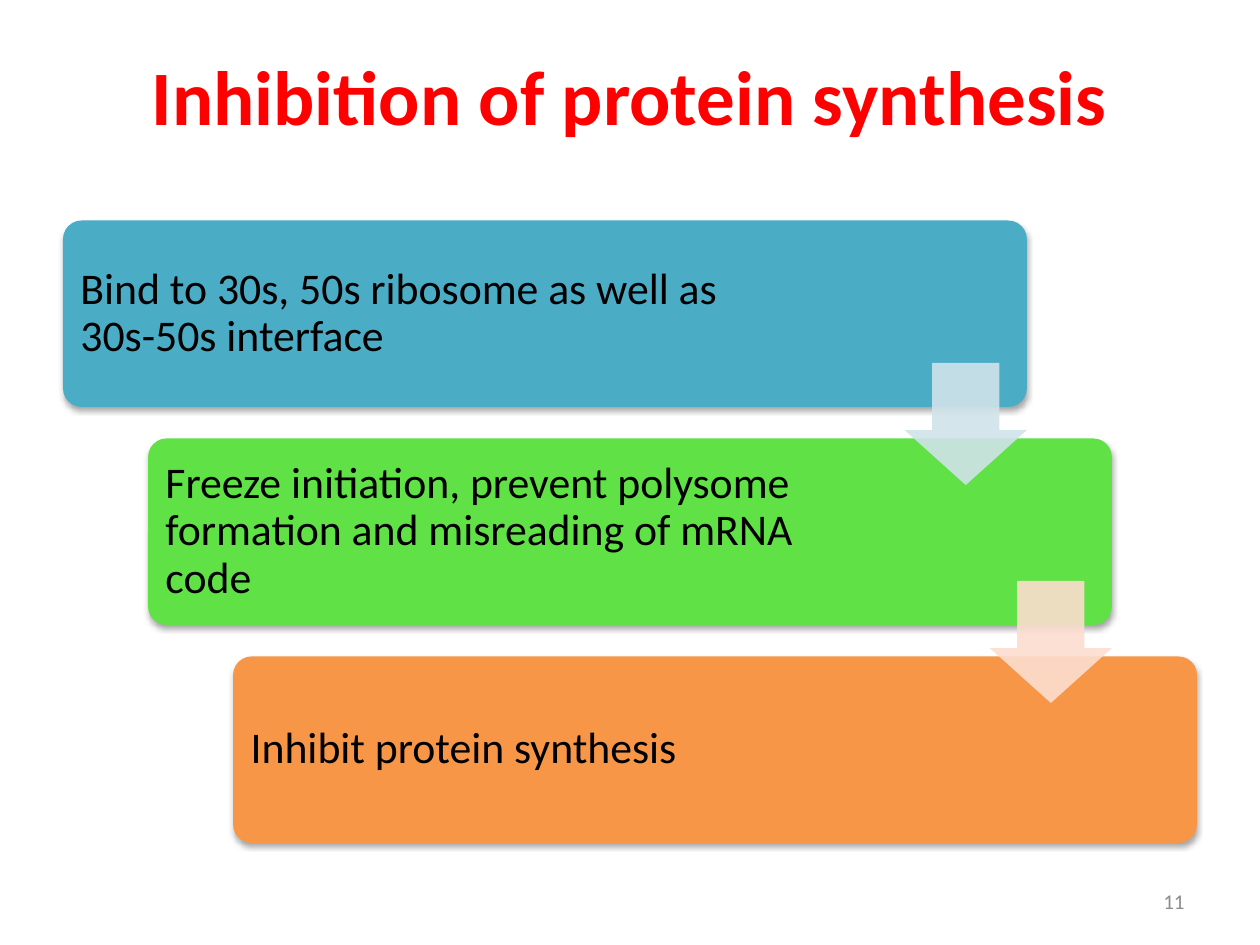
from lxml import etree
from pptx import Presentation
from pptx.dml.color import RGBColor
from pptx.enum.shapes import MSO_SHAPE
from pptx.enum.text import MSO_ANCHOR, PP_ALIGN
from pptx.oxml.ns import qn
from pptx.util import Inches, Pt

LEFT, CENTER, RIGHT = PP_ALIGN.LEFT, PP_ALIGN.CENTER, PP_ALIGN.RIGHT
MIDDLE = MSO_ANCHOR.MIDDLE
ROUNDED, DOWN_ARROW = MSO_SHAPE.ROUNDED_RECTANGLE, MSO_SHAPE.DOWN_ARROW
FONT = "Calibri"

# Staircase geometry in inches
MARGIN, CONTENT_WIDTH = 0.5, 9
CARD_TOP, CARD_WIDTH, CARD_HEIGHT = 1.75, 7.65, 1.48
STEP_DOWN = 1.73
TEXT_INSET = 0.04
ARROW_SIZE, ARROW_DROP = 0.97, 1.13

# Text, card colour, text width
STEPS = [
    ("Bind to 30s, 50s ribosome as well as 30s-50s interface", "4BACC6", 6.05),
    ("Freeze initiation, prevent polysome formation and misreading of mRNA code",
     "60E146", 5.92),
    ("Inhibit protein synthesis", "F79646", 5.92),
]
ARROW_COLORS = ["D0E3EA", "FCDDCF"]


def rgb(color):
    return RGBColor.from_string(color)


def add_text(slide, text, left, top, width, height, *, size, color="000000",
             bold=False, align=LEFT, inset=None, line_spacing=None):
    box = slide.shapes.add_textbox(Inches(left), Inches(top), Inches(width), Inches(height))
    frame = box.text_frame
    frame.word_wrap = True
    frame.vertical_anchor = MIDDLE
    if inset is not None:
        frame.margin_left = frame.margin_right = Inches(inset)
        frame.margin_top = frame.margin_bottom = Inches(inset)
    paragraph = frame.paragraphs[0]
    paragraph.alignment = align
    paragraph.line_spacing = line_spacing
    run = paragraph.add_run()
    run.text = text
    run.font.name = FONT
    run.font.size = Pt(size)
    run.font.bold = bold
    run.font.color.rgb = rgb(color)


def add_filled_shape(slide, kind, left, top, width, height, color, adjustments):
    shape = slide.shapes.add_shape(kind, Inches(left), Inches(top), Inches(width), Inches(height))
    for index, value in enumerate(adjustments):
        shape.adjustments[index] = value
    shape.shadow.inherit = False
    shape.fill.solid()
    shape.fill.fore_color.rgb = rgb(color)
    shape.line.fill.background()
    return shape


def add_alpha(color_element, percent):
    etree.SubElement(color_element, qn("a:alpha"), val=str(percent * 1000))


def add_shadow(shape):
    effects = shape.element.spPr.find(qn("a:effectLst"))
    shadow = etree.SubElement(effects, qn("a:outerShdw"), blurRad=str(Pt(3.1)),
                              dist=str(Pt(1.8)), dir=str(90 * 60000), rotWithShape="0")
    add_alpha(etree.SubElement(shadow, qn("a:srgbClr"), val="000000"), 35)


def add_card(slide, left, top, text, color, text_width):
    card = add_filled_shape(slide, ROUNDED, left, top, CARD_WIDTH, CARD_HEIGHT, color, [0.1])
    add_shadow(card)
    add_text(slide, text, left + TEXT_INSET, top + TEXT_INSET, text_width,
             CARD_HEIGHT - 2 * TEXT_INSET, size=25, inset=0.1, line_spacing=0.9)


def add_arrow(slide, left, top, color):
    arrow = add_filled_shape(slide, DOWN_ARROW, left, top, ARROW_SIZE, ARROW_SIZE,
                             color, [0.55, 0.45])
    add_alpha(arrow.element.spPr.find(qn("a:solidFill"))[0], 90)


def main():
    presentation = Presentation()
    presentation.slide_width, presentation.slide_height = Inches(10), Inches(7.5)
    slide = presentation.slides.add_slide(presentation.slide_layouts[6])

    # Title
    add_text(slide, "Inhibition of protein synthesis", MARGIN, 0.17, CONTENT_WIDTH, 1.17,
             size=44, color="FF0000", bold=True, align=CENTER)

    # Staircase of cards, then the arrows over them
    step_right = (CONTENT_WIDTH - CARD_WIDTH) / (len(STEPS) - 1)
    corners = [(MARGIN + i * step_right, CARD_TOP + i * STEP_DOWN) for i in range(len(STEPS))]
    for (left, top), step in zip(corners, STEPS):
        add_card(slide, left, top, *step)
    for (left, top), color in zip(corners, ARROW_COLORS):
        add_arrow(slide, left + CARD_WIDTH - ARROW_SIZE, top + ARROW_DROP, color)

    # Page number
    add_text(slide, "11", 7.17, 6.95, 2.33, 0.4, size=12, color="8C8C8C", align=RIGHT)

    presentation.save("out.pptx")


if __name__ == "__main__":
    main()
